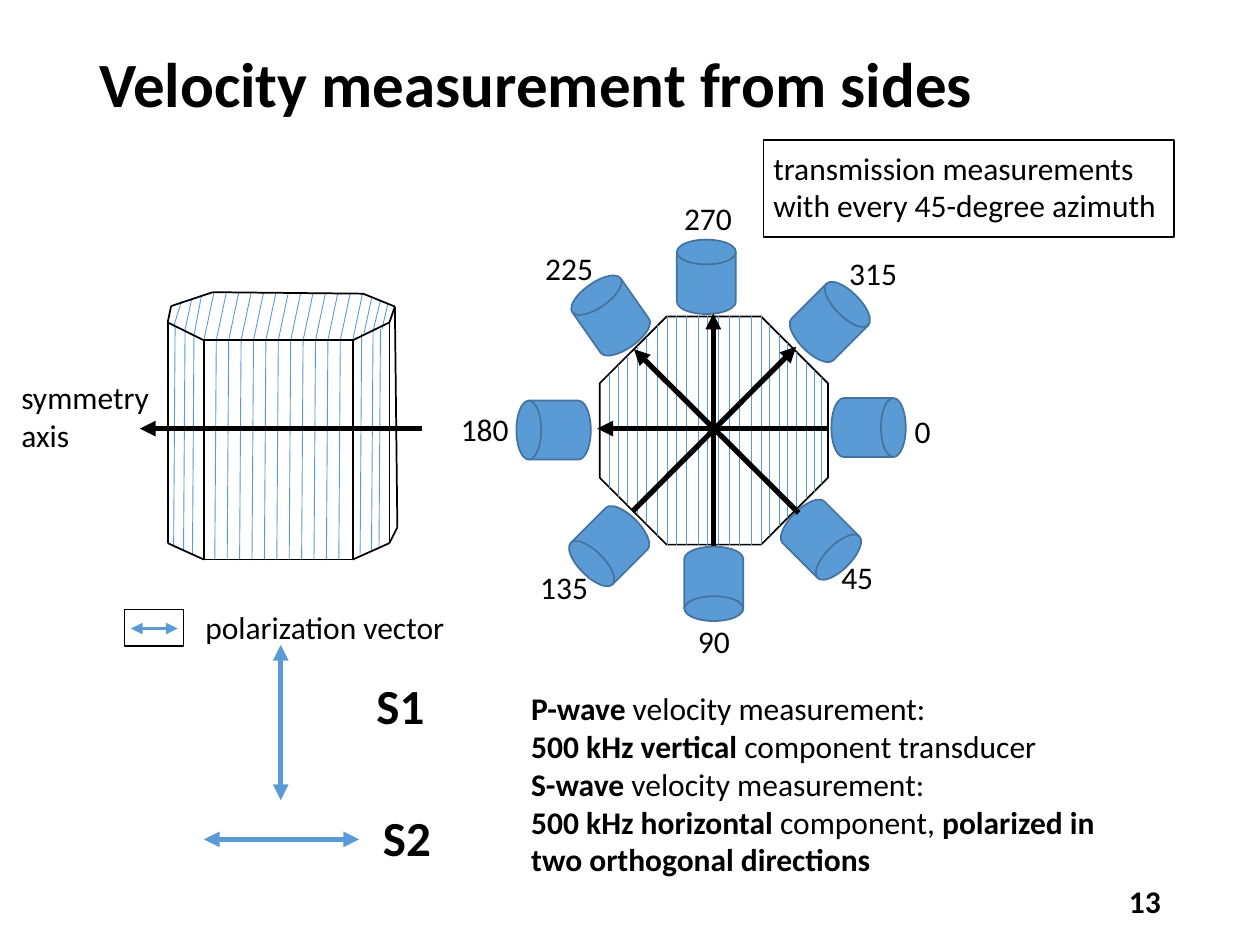
from itertools import pairwise

from lxml import etree
from pptx import Presentation
from pptx.dml.color import RGBColor
from pptx.enum.shapes import MSO_CONNECTOR, MSO_SHAPE as Preset
from pptx.enum.text import MSO_ANCHOR as Anchor, PP_ALIGN as Align
from pptx.oxml.ns import qn
from pptx.util import Cm, Pt

BLACK = RGBColor(0x00, 0x00, 0x00)
BLUE = RGBColor(0x5B, 0x9B, 0xD5)
DARK_BLUE = RGBColor(0x43, 0x73, 0x9E)
FONT = "Calibri"

# Content; all lengths are in centimetres
TITLE = "Velocity measurement from sides"
PAGE_NUMBER = "13"
WAVE_NOTES = [
    [("P-wave", True), (" velocity measurement:", False)],
    [("500 kHz vertical ", True), ("component transducer", False)],
    [("S-wave ", True), ("velocity measurement:", False)],
    [("500 kHz horizontal", True), (" component, ", False),
     ("polarized in two orthogonal directions", True)],
]

# Azimuth, rotation, centre of transducer, left, top and width of label
TRANSDUCERS = [
    ("0", 0, (17.51, 8.62), (18.19, 8.18, 1.12)),
    ("45", 45, (16.55, 10.88), (16.71, 11.13, 1.24)),
    ("90", 90, (14.39, 11.77), (13.82, 12.42, 1.5)),
    ("135", 135, (12.28, 11.01), (10.64, 11.33, 1.55)),
    ("180", 180, (11.16, 8.67), (9.04, 8.15, 1.5)),
    ("225", 235, (12.31, 6.36), (10.74, 4.9, 1.55)),
    ("270", 270, (14.24, 5.58), (13.54, 3.89, 1.55)),
    ("315", 315, (16.73, 6.49), (16.87, 5.0, 1.55)),
]
DRUM_WIDTH, DRUM_HEIGHT = 1.5, 1.19

# Octagon seen from above, its layers and the ray paths through it
OCTAGON_CENTER = (14.39, 8.68)
OCTAGON_RADIUS, OCTAGON_HALF_SIDE = 2.3, 0.95
LAYER_XS = [12.29, 12.47, 12.65, 12.85, 13.03, 13.26, 13.46, 13.64, 13.84,
            14.07, 14.27, 14.48, 14.71, 14.91, 15.14, 15.34, 15.52, 15.72,
            15.88, 16.05, 16.26, 16.41, 16.56]
RAYS = [
    ((16.71, 8.64), (12.04, 8.64)),
    ((16.1, 10.34), (12.78, 7.04)),
    ((14.38, 11.0), (14.38, 6.32)),
    ((12.75, 10.31), (16.05, 6.99)),
]

# Prism seen from the side
PRISM_TOP = [(3.38, 6.5), (4.11, 6.86), (7.11, 6.86), (7.85, 6.5),
             (7.96, 6.18), (7.32, 5.92), (4.29, 5.89), (3.45, 6.17)]
PRISM_BOTTOM = [(3.38, 10.95), (4.11, 11.28), (7.11, 11.28), (7.85, 10.95),
                (8.01, 10.63)]
LAYER_STEP, LAYER_HEIGHT = 0.25, 4.43
SIDE_LAYER_TOPS = [(3.53, 6.6), (3.73, 6.68), (3.91, 6.76),
                   (7.29, 6.73), (7.52, 6.68), (7.67, 6.63)]
CORNER_LAYERS = [
    ((3.51, 6.55), (3.66, 6.07)), ((3.73, 6.65), (3.86, 6.05)),
    ((3.91, 6.76), (4.06, 5.97)), ((7.34, 6.71), (7.49, 6.02)),
    ((7.52, 6.68), (7.67, 6.05)), ((7.7, 6.63), (7.82, 6.12)),
]

presentation = Presentation()
presentation.slide_width, presentation.slide_height = Cm(25.4), Cm(19.05)
slide = presentation.slides.add_slide(presentation.slide_layouts[6])


def add_line(start, end, color=BLACK, width=1, arrows=()):
    """Draw a line; arrows may hold "headEnd" and "tailEnd", in that order."""
    line = slide.shapes.add_connector(
        MSO_CONNECTOR.STRAIGHT, *map(Cm, (*start, *end)))
    line.line.color.rgb = color
    line.line.width = Pt(width)
    for arrow in arrows:
        etree.SubElement(line.line._get_or_add_ln(), qn("a:" + arrow),
                         type="triangle")
    etree.SubElement(line._element.spPr, qn("a:effectLst"))


def add_shape(preset, left, top, width, height, fill=None, outline=BLACK):
    shape = slide.shapes.add_shape(preset, *map(Cm, (left, top, width, height)))
    shape.shadow.inherit = False
    if fill is None:
        shape.fill.background()
    else:
        shape.fill.solid()
        shape.fill.fore_color.rgb = fill
    shape.line.color.rgb = outline
    shape.line.width = Pt(1)
    return shape


def add_text(paragraphs, left, top, width, height=1.03, size=18, bold=False,
             anchor=Anchor.TOP, align=Align.LEFT, spacing=None):
    """Add a text box; a paragraph is a string or a list of (text, bold)."""
    box = slide.shapes.add_textbox(*map(Cm, (left, top, width, height)))
    frame = box.text_frame
    frame.word_wrap = True
    frame.vertical_anchor = anchor
    for index, content in enumerate(paragraphs):
        paragraph = frame.add_paragraph() if index else frame.paragraphs[0]
        paragraph.alignment = align
        paragraph.line_spacing = spacing
        runs = [(content, bold)] if isinstance(content, str) else content
        for text, run_bold in runs:
            run = paragraph.add_run()
            run.text = text
            run.font.name = FONT
            run.font.size = Pt(size)
            run.font.bold = run_bold
            run.font.color.rgb = BLACK


# Title and page number
add_text([TITLE], 1.75, -0.08, 21.9, 3.68, size=36, bold=True,
         anchor=Anchor.MIDDLE, spacing=0.9)
add_text([PAGE_NUMBER], 17.93, 17.65, 5.72, bold=True,
         anchor=Anchor.MIDDLE, align=Align.RIGHT)

# Prism: layers on the front, the sides and the top, then the edges
front_left, front_top = PRISM_TOP[1]
front_layer_tops = [(front_left + LAYER_STEP * i, front_top)
                    for i in range(1, 12)]
for x, y in front_layer_tops + SIDE_LAYER_TOPS:
    add_line((x, y), (x - 0.03, y + LAYER_HEIGHT), BLUE, 0.5)
top_layers = [((x, front_top), (x + 0.2, 5.91))
              for x in (front_left + LAYER_STEP * i for i in range(13))]
for start, end in top_layers + CORNER_LAYERS:
    add_line(start, end, BLUE, 0.5)
edges = [*pairwise(PRISM_TOP + PRISM_TOP[:1]), *pairwise(PRISM_BOTTOM),
         *zip(PRISM_TOP, PRISM_BOTTOM)]
for start, end in edges:
    add_line(start, end)

# Symmetry axis
add_line((8.51, 8.64), (2.82, 8.64), width=3, arrows=["tailEnd"])
add_text(["symmetry", "axis"], 0.18, 7.49, 4.37, 1.8)

# Octagon with its layers
center_x, center_y = OCTAGON_CENTER
octagon = add_shape(Preset.OCTAGON, center_x - OCTAGON_RADIUS,
                    center_y - OCTAGON_RADIUS,
                    2 * OCTAGON_RADIUS, 2 * OCTAGON_RADIUS)
octagon.rotation = 90
for x in LAYER_XS:
    half = min(OCTAGON_RADIUS,
               OCTAGON_RADIUS + OCTAGON_HALF_SIDE - abs(x - center_x))
    add_line((x, center_y - half), (x, center_y + half), BLUE, 0.5)

# Transducers with azimuth labels, and rays between them
for azimuth, rotation, (x, y), (left, top, width) in TRANSDUCERS:
    drum = add_shape(Preset.FLOWCHART_DIRECT_ACCESS_STORAGE,
                     x - DRUM_WIDTH / 2, y - DRUM_HEIGHT / 2,
                     DRUM_WIDTH, DRUM_HEIGHT, BLUE, DARK_BLUE)
    drum.rotation = rotation
    add_text([azimuth], left, top, width)
for start, end in RAYS:
    add_line(start, end, width=3, arrows=["tailEnd"])

# Polarization legend and the two S-wave directions
add_shape(Preset.RECTANGLE, 2.51, 12.29, 1.19, 0.74)
add_text(["polarization vector"], 3.89, 12.14, 6.78)
for start, end, width in [((2.64, 12.67), (3.58, 12.67), 2.25),
                          ((5.66, 16.13), (5.66, 13.0), 3),
                          ((4.11, 16.92), (7.24, 16.92), 3)]:
    add_line(start, end, BLUE, width, ["headEnd", "tailEnd"])
add_text(["S1"], 7.34, 13.49, 3.2, 1.45, size=28, bold=True)
add_text(["S2"], 7.47, 16.15, 3.2, 1.45, size=28, bold=True)

# Notes on the measurements
add_text(["transmission measurements with every 45-degree azimuth"],
         15.34, 2.87, 8.41, 1.8)
add_shape(Preset.RECTANGLE, 15.39, 2.82, 8.28, 1.96)
add_text(WAVE_NOTES, 10.46, 13.77, 12.8, 4.11)

presentation.save("out.pptx")
